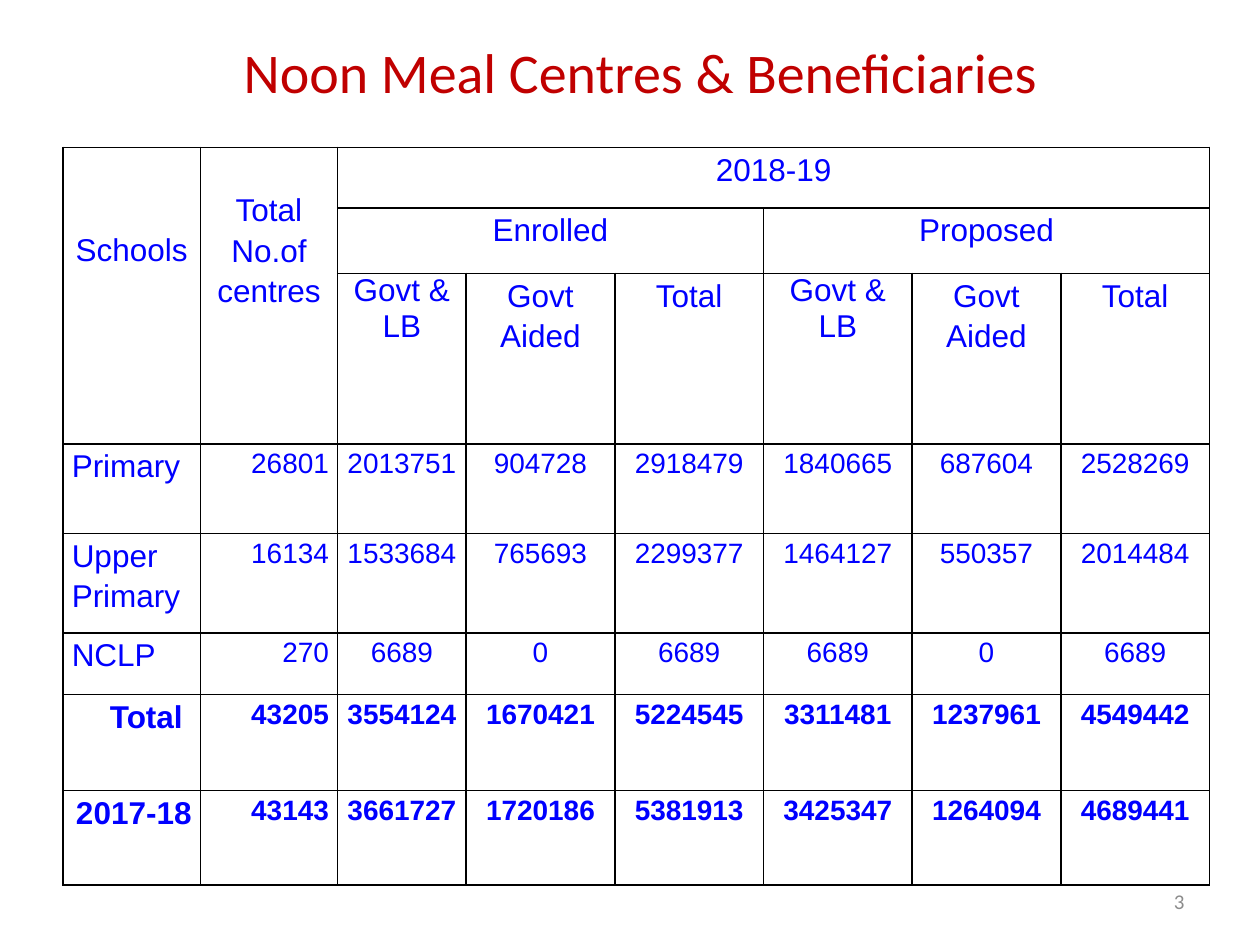
from dataclasses import dataclass
from lxml.etree import SubElement
from pptx import Presentation
from pptx.dml.color import RGBColor
from pptx.enum.text import MSO_ANCHOR, PP_ALIGN
from pptx.oxml.ns import qn
from pptx.util import Inches, Pt


@dataclass(frozen=True)
class Theme:
    blue: str = "0000FF"
    red: str = "C00000"
    gray: str = "8C8C8C"
    black: str = "000000"
    head: str = "Calibri"
    body: str = "Arial"
    title: int = 32
    label: int = 18
    value: int = 16
    small: int = 12


@dataclass(frozen=True)
class Head:
    text: str
    row: int
    col: int
    rows: int = 1
    cols: int = 1
    top: float = 0
    lead: float = 1.15


@dataclass(frozen=True)
class School:
    name: str
    values: tuple[int, ...]
    bold: bool = False


LOOK = Theme()
LEFT, MID, RIGHT = PP_ALIGN.LEFT, PP_ALIGN.CENTER, PP_ALIGN.RIGHT
WIDTHS = [1.09, 1.09, 1.02] + [1.18] * 5
HEIGHTS = [0.48, 0.52, 1.25, 0.71, 0.79, 0.49, 0.76, 0.75]
LINE = 0.32

HEADS = [
    Head("Schools", 0, 0, rows=3, top=2 * LINE),
    Head("Total No.of centres", 0, 1, rows=3, top=LINE),
    Head("2018-19", 0, 2, cols=6),
]
for col, group in ((2, "Enrolled"), (5, "Proposed")):
    HEADS += [
        Head(group, 1, col, cols=3),
        Head("Govt & LB", 2, col, lead=1),
        Head("Govt Aided", 2, col + 1),
        Head("Total", 2, col + 2),
    ]

SCHOOLS = [
    School("Primary", (26801, 2013751, 904728, 2918479, 1840665, 687604, 2528269)),
    School("Upper Primary", (16134, 1533684, 765693, 2299377, 1464127, 550357, 2014484)),
    School("NCLP", (270, 6689, 0, 6689, 6689, 0, 6689)),
    School("Total ", (43205, 3554124, 1670421, 5224545, 3311481, 1237961, 4549442), True),
    School("2017-18", (43143, 3661727, 1720186, 5381913, 3425347, 1264094, 4689441), True),
]


def write(frame, text: str, *, size: int, color: str = LOOK.blue,
          face: str = LOOK.body, align=MID, bold: bool = False,
          lead: float = 1.15) -> None:
    frame.word_wrap = True
    para = frame.paragraphs[0]
    para.alignment = align
    para.line_spacing = lead
    run = para.add_run()
    run.text = text
    font = run.font
    font.name, font.size, font.bold = face, Pt(size), bold
    font.color.rgb = RGBColor.from_string(color)


def label(slide, text: str, box: tuple[float, ...], **style) -> None:
    frame = slide.shapes.add_textbox(*map(Inches, box)).text_frame
    frame.vertical_anchor = MSO_ANCHOR.MIDDLE
    write(frame, text, face=LOOK.head, lead=1, **style)


def border(cell) -> None:
    props = cell._tc.get_or_add_tcPr()
    for spot, side in enumerate(("lnL", "lnR", "lnT", "lnB")):
        line = props.makeelement(qn(f"a:{side}"), {"w": str(Pt(1))})
        fill = SubElement(line, qn("a:solidFill"))
        SubElement(fill, qn("a:srgbClr"), val=LOOK.black)
        props.insert(spot, line)


def grid(slide):
    table = slide.shapes.add_table(
        len(HEIGHTS), len(WIDTHS), Inches(0.5), Inches(1.17),
        Inches(sum(WIDTHS)), Inches(sum(HEIGHTS))).table
    table.first_row = table.horz_banding = False
    for col, width in zip(table.columns, WIDTHS):
        col.width = Inches(width)
    for row, height in zip(table.rows, HEIGHTS):
        row.height = Inches(height)
    for cell in table.iter_cells():
        cell.fill.background()
        cell.margin_left = cell.margin_right = Inches(0.07)
        cell.margin_top = cell.margin_bottom = 0
        border(cell)
    return table


def put_head(table, head: Head) -> None:
    cell = table.cell(head.row, head.col)
    if head.rows * head.cols > 1:
        cell.merge(table.cell(head.row + head.rows - 1, head.col + head.cols - 1))
    cell.margin_top = Inches(head.top)
    write(cell.text_frame, head.text, size=LOOK.label, lead=head.lead)


def put_school(table, row: int, school: School) -> None:
    write(table.cell(row, 0).text_frame, school.name, size=LOOK.label,
          align=RIGHT if school.bold else LEFT, bold=school.bold)
    for col, value in enumerate(school.values, 1):
        write(table.cell(row, col).text_frame, str(value), size=LOOK.value,
              align=RIGHT if col == 1 else MID, bold=school.bold)


def main() -> None:
    deck = Presentation()
    deck.slide_width, deck.slide_height = Inches(10), Inches(7.5)
    slide = deck.slides.add_slide(deck.slide_layouts[6])
    label(slide, "Noon Meal Centres & Beneficiaries", (0.75, 0.3, 8.67, 0.53),
          size=LOOK.title, color=LOOK.red)
    label(slide, "3", (7.17, 6.95, 2.33, 0.4),
          size=LOOK.small, color=LOOK.gray, align=RIGHT)
    table = grid(slide)
    for head in HEADS:
        put_head(table, head)
    for row, school in enumerate(SCHOOLS, 3):
        put_school(table, row, school)
    deck.save("out.pptx")


if __name__ == "__main__":
    main()
